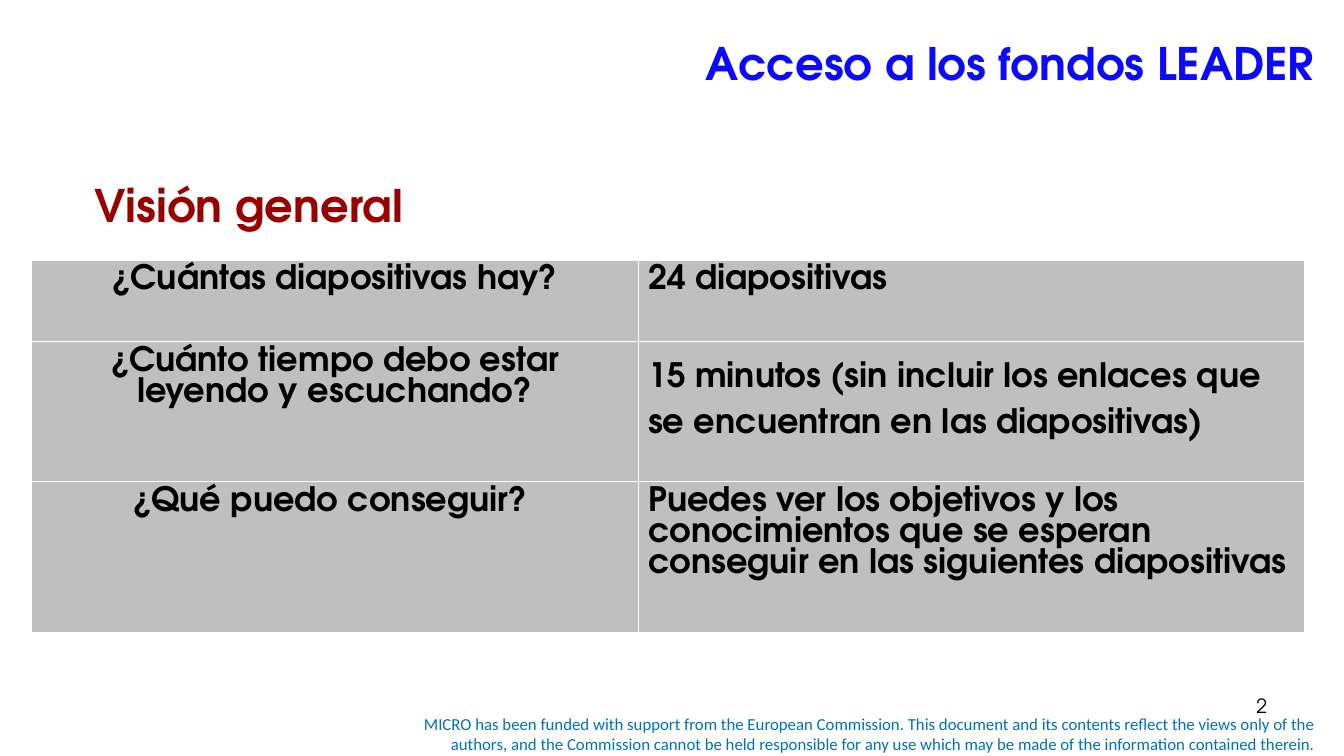
from dataclasses import dataclass

from lxml.etree import SubElement
from pptx import Presentation
from pptx.dml.color import RGBColor
from pptx.enum.text import MSO_ANCHOR, PP_ALIGN
from pptx.oxml.ns import qn
from pptx.util import Inches, Pt


@dataclass(frozen=True)
class Theme:
    """Colours, fonts and type sizes of the slide."""
    title: str = "0B0AFD"
    heading: str = "990000"
    footer: str = "0070C0"
    ink: str = "000000"
    cell: str = "BFBFBF"
    border: str = "FFFFFF"
    main_font: str = "TeX Gyre Adventor"
    footer_font: str = "Calibri"
    large: int = 32
    body: int = 24
    number: int = 14
    small: int = 12


class SlideBuilder:
    """Places elements by percentages of the slide's width and height."""

    def __init__(self, prs, theme):
        self.prs, self.theme = prs, theme
        self.s = prs.slides.add_slide(prs.slide_layouts[6])

    def x(self, share):
        return round(self.prs.slide_width * share / 100)

    def y(self, share):
        return round(self.prs.slide_height * share / 100)

    def fill_text(self, tf, text, size, color, font=None, bold=False, **layout):
        p = tf.paragraphs[0]
        for name, value in layout.items():
            setattr(p, name, value)
        r = p.add_run()
        r.text = text
        style = {"name": font or self.theme.main_font, "size": Pt(size), "bold": bold}
        for name, value in style.items():
            setattr(r.font, name, value)
        r.font.color.rgb = RGBColor.from_string(color)

    def text(self, box, text, size, color, anchor=MSO_ANCHOR.TOP, **style):
        left, top, width, height = box
        sp = self.s.shapes.add_textbox(
            self.x(left), self.y(top), self.x(width), self.y(height))
        tf = sp.text_frame
        for name, value in {"word_wrap": True, "vertical_anchor": anchor}.items():
            setattr(tf, name, value)
        self.fill_text(tf, text, size, color, **style)

    def border(self, cell):
        tc_pr = cell._tc.get_or_add_tcPr()
        for side in "LRTB":
            ln = SubElement(tc_pr, qn(f"a:ln{side}"), w=str(Pt(1)))
            fill = SubElement(ln, qn("a:solidFill"))
            SubElement(fill, qn("a:srgbClr"), val=self.theme.border)

    def table(self, left, top, widths, heights, rows):
        table = self.s.shapes.add_table(
            len(heights), len(widths), self.x(left), self.y(top),
            self.x(sum(widths)), self.y(sum(heights))).table
        for name in ("first_row", "horz_banding"):
            setattr(table, name, False)
        for column, width in zip(table.columns, widths):
            column.width = self.x(width)
        for row, height, entries in zip(table.rows, heights, rows):
            row.height = self.y(height)
            for cell, (text, layout) in zip(row.cells, entries):
                self.border(cell)
                cell.fill.solid()
                cell.fill.fore_color.rgb = RGBColor.from_string(self.theme.cell)
                self.fill_text(cell.text_frame, text, self.theme.body,
                               self.theme.ink, bold=True, **layout)


def main():
    prs = Presentation()
    prs.slide_width, prs.slide_height = Inches(13.33), Inches(7.5)
    theme = Theme()
    slide = SlideBuilder(prs, theme)
    right = {"alignment": PP_ALIGN.RIGHT}
    center = {"alignment": PP_ALIGN.CENTER}
    left = {"alignment": PP_ALIGN.LEFT}

    slide.text((28.13, 93.73, 70.5, 6.67),
               "MICRO has been funded with support from the European Commission. "
               "This document and its contents reflect the views only of the authors, "
               "and the Commission cannot be held responsible for any use which may be "
               "made of the information contained therein.",
               theme.small, theme.footer, MSO_ANCHOR.MIDDLE,
               font=theme.footer_font, **right)
    slide.text((8.55, 0, 90, 16.67), "Acceso a los fondos LEADER",
               theme.large, theme.title, MSO_ANCHOR.MIDDLE, bold=True, **right)
    slide.table(2.33, 34.4, (45.15, 49.6), (10.8, 18.53, 20), (
        (("¿Cuántas diapositivas hay?", center), ("24 diapositivas", left)),
        (("¿Cuánto tiempo debo estar leyendo y escuchando?", center),
         ("15 minutos (sin incluir los enlaces que se encuentran en las diapositivas)",
          {**left, "line_spacing": 1.5})),
        (("¿Qué puedo conseguir? ", center),
         ("Puedes ver los objetivos y los conocimientos que se esperan conseguir "
          "en las siguientes diapositivas", left)),
    ))
    slide.text((71.7, 91.07, 23.33, 6.93), "2", theme.number, theme.ink, **right)
    slide.text((6.3, 22.8, 31, 8.53), "Visión general",
               theme.large, theme.heading, bold=True, **left)
    prs.save("out.pptx")


if __name__ == "__main__":
    main()
